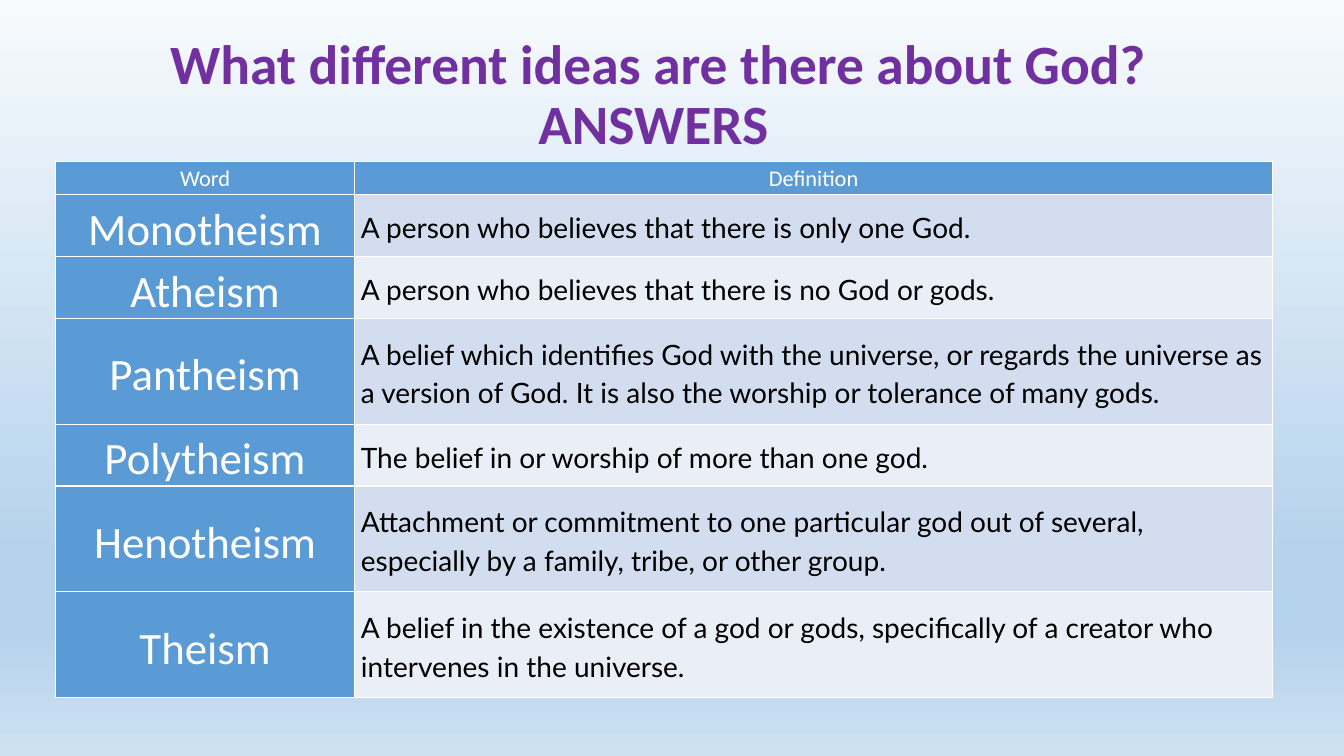
from lxml import etree
from pptx import Presentation
from pptx.dml.color import RGBColor
from pptx.enum.text import MSO_ANCHOR, PP_ALIGN
from pptx.oxml.ns import qn
from pptx.util import Inches, Pt

CENTER, LEFT = PP_ALIGN.CENTER, PP_ALIGN.LEFT
TOP, MIDDLE = MSO_ANCHOR.TOP, MSO_ANCHOR.MIDDLE
PURPLE = RGBColor(0x70, 0x30, 0xA0)
BLUE = RGBColor(0x5B, 0x9B, 0xD5)
BAND_DARK = RGBColor(0xD2, 0xDE, 0xEF)
BAND_LIGHT = RGBColor(0xEA, 0xEF, 0xF7)
WHITE = RGBColor(0xFF, 0xFF, 0xFF)
BLACK = RGBColor(0, 0, 0)
SKY_STOPS = [(0, "F7FAFD"), (74, "B5D2EC"), (83, "B5D2EC"), (100, "CEE1F2")]

TITLE_LINES = ["What different ideas are there about God? ", "ANSWERS\t"]
ENTRIES = [
    ("Word", "Definition", 0.33),
    ("Monotheism", "A person who believes that there is only one God.", 0.57),
    ("Atheism", "A person who believes that there is no God or gods.", 0.57),
    ("Pantheism", "A belief which identifies God with the universe, or regards the universe as "
     "a version of God. It is also the worship or tolerance of many gods.", 1.05),
    ("Polytheism", "The belief in or worship of more than one god.", 0.57),
    ("Henotheism", "Attachment or commitment to one particular god out of several, "
     "especially by a family, tribe, or other group.", 1.05),
    ("Theism", "A belief in the existence of a god or gods, specifically of a creator who "
     "intervenes in the universe.", 1.05),
]


def write(paragraph, text, size, color, font="Calibri", bold=False, align=CENTER, spacing=1.15):
    paragraph.alignment = align
    paragraph.line_spacing = spacing
    run = paragraph.add_run()
    run.text = text
    run.font.name = font
    run.font.size = Pt(size)
    run.font.bold = bold
    run.font.color.rgb = color


def style_cell(cell, fill, anchor):
    """Set margins, a white border on all sides and the fill of a table cell."""
    cell.margin_left = cell.margin_right = Inches(0.06)
    cell.margin_top = cell.margin_bottom = 0
    cell.vertical_anchor = anchor
    properties = cell._tc.get_or_add_tcPr()
    for side in ("a:lnL", "a:lnR", "a:lnT", "a:lnB"):
        border = etree.SubElement(properties, qn(side), w=str(Pt(1)))
        line_fill = etree.SubElement(border, qn("a:solidFill"))
        etree.SubElement(line_fill, qn("a:srgbClr"), val=str(WHITE))
    cell.fill.solid()
    cell.fill.fore_color.rgb = fill


prs = Presentation()
prs.slide_width, prs.slide_height = Inches(13.33), Inches(7.5)
slide = prs.slides.add_slide(prs.slide_layouts[6])

# Sky gradient, running from top to bottom
sky = slide.background.fill
sky.gradient()
sky.gradient_angle = 270
stop_list = slide.element.find(".//" + qn("a:gsLst"))
for default_stop in list(stop_list):
    stop_list.remove(default_stop)
for percent, color in SKY_STOPS:
    stop = etree.SubElement(stop_list, qn("a:gs"), pos=str(percent * 1000))
    etree.SubElement(stop, qn("a:srgbClr"), val=color)

# Title
title = slide.shapes.add_textbox(Inches(1.27), Inches(0.36), Inches(10.64), Inches(1.2)).text_frame
title.word_wrap = True
title.vertical_anchor = MIDDLE
title.margin_top = title.margin_bottom = 0
for index, line in enumerate(TITLE_LINES):
    paragraph = title.add_paragraph() if index else title.paragraphs[0]
    write(paragraph, line, 39.6, PURPLE, bold=True, spacing=0.9)

# Words and definitions
glossary = slide.shapes.add_table(
    len(ENTRIES), 2, Inches(0.55), Inches(1.6), Inches(12.07), Inches(5.19)).table
glossary.columns[0].width = Inches(2.97)
glossary.columns[1].width = Inches(9.1)
for row, (word, definition, height) in enumerate(ENTRIES):
    glossary.rows[row].height = Inches(height)
    word_cell, definition_cell = glossary.cell(row, 0), glossary.cell(row, 1)
    word_text = word_cell.text_frame.paragraphs[0]
    definition_text = definition_cell.text_frame.paragraphs[0]
    if row == 0:
        style_cell(word_cell, BLUE, TOP)
        style_cell(definition_cell, BLUE, TOP)
        write(word_text, word, 16, WHITE)
        write(definition_text, definition, 16, WHITE)
    else:
        style_cell(word_cell, BLUE, MIDDLE)
        style_cell(definition_cell, BAND_DARK if row % 2 else BAND_LIGHT, MIDDLE)
        write(word_text, word, 32, WHITE)
        write(definition_text, definition, 20, BLACK, font="Lato", align=LEFT)

prs.save("out.pptx")
